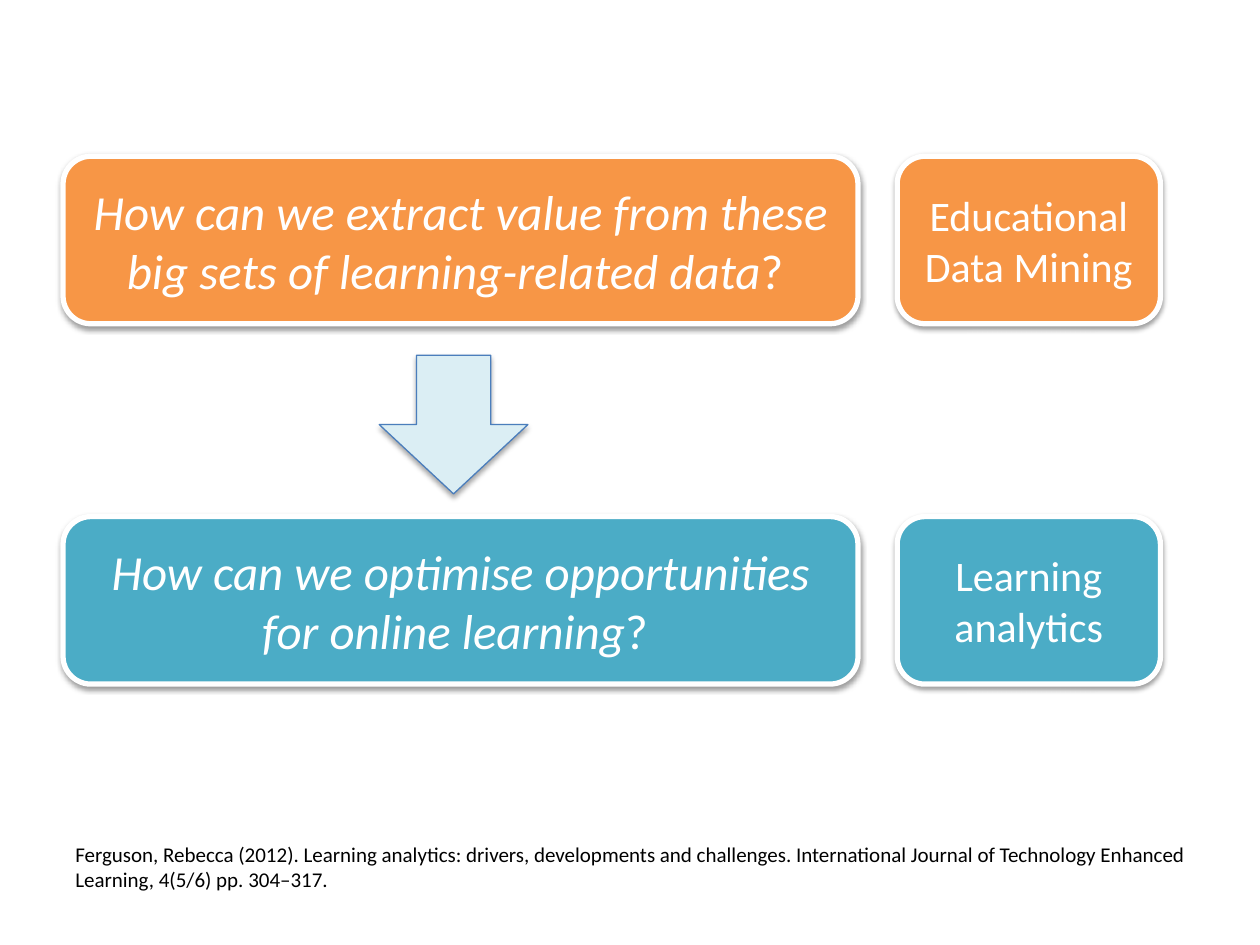
from lxml import etree
from pptx import Presentation
from pptx.dml.color import RGBColor
from pptx.enum.shapes import MSO_SHAPE
from pptx.enum.text import MSO_ANCHOR, MSO_AUTO_SIZE, PP_ALIGN
from pptx.oxml.ns import qn
from pptx.util import Inches, Pt

ROUNDED = MSO_SHAPE.ROUNDED_RECTANGLE
DOWN_ARROW = MSO_SHAPE.DOWN_ARROW
MIDDLE = MSO_ANCHOR.MIDDLE
GROW = MSO_AUTO_SIZE.SHAPE_TO_FIT_TEXT
LEFT, CENTER = PP_ALIGN.LEFT, PP_ALIGN.CENTER

WHITE = RGBColor(0xFF, 0xFF, 0xFF)
BLACK = RGBColor(0x00, 0x00, 0x00)
ORANGE = RGBColor(0xF7, 0x96, 0x46)
TEAL = RGBColor(0x4B, 0xAC, 0xC6)
PALE_BLUE = RGBColor(0xDB, 0xEE, 0xF4)
BLUE = RGBColor(0x4B, 0x7E, 0xBC)


def write_text(frame, spans, size, color, font, align=LEFT):
    """Fill one paragraph with (text, italic) spans."""
    frame.word_wrap = True
    para = frame.paragraphs[0]
    para.alignment = align
    for text, italic in spans:
        span = para.add_run()
        span.text = text
        span.font.name = font
        span.font.size = Pt(size)
        span.font.italic = italic
        span.font.color.rgb = color


class SlideBuilder:
    font = "Calibri"

    def __init__(self, page):
        self.page = page

    def add_shadow(self, shape, opacity, distance):
        """Give the shape a soft shadow that falls straight down."""
        shape.shadow.inherit = False
        effects = shape._element.spPr.find(qn("a:effectLst"))
        shadow = etree.SubElement(
            effects, qn("a:outerShdw"), blurRad=str(Pt(3.1)),
            dist=str(Pt(distance)), dir="5400000", rotWithShape="0")
        color = etree.SubElement(shadow, qn("a:srgbClr"), val=str(BLACK))
        etree.SubElement(color, qn("a:alpha"), val=str(opacity * 1000))

    def shape(self, kind, bounds, fill, line, line_width, opacity, distance):
        shape = self.page.shapes.add_shape(kind, *map(Inches, bounds))
        shape.fill.solid()
        shape.fill.fore_color.rgb = fill
        shape.line.color.rgb = line
        shape.line.width = Pt(line_width)
        self.add_shadow(shape, opacity, distance)
        return shape

    def card(self, bounds, fill, spans, size):
        box = self.shape(ROUNDED, bounds, fill, WHITE, 3, 38, 1.6)
        box.text_frame.vertical_anchor = MIDDLE
        write_text(box.text_frame, spans, size, WHITE, self.font, CENTER)

    def arrow(self, bounds):
        self.shape(DOWN_ARROW, bounds, PALE_BLUE, BLUE, 0.75, 35, 1.8)

    def note(self, bounds, text, size):
        box = self.page.shapes.add_textbox(*map(Inches, bounds))
        write_text(box.text_frame, [(text, False)], size, BLACK, self.font)
        box.text_frame.auto_size = GROW


def main():
    deck = Presentation()
    deck.slide_width, deck.slide_height = Inches(10), Inches(7.5)
    builder = SlideBuilder(deck.slides.add_slide(deck.slide_layouts[6]))

    # Each row pairs a question with its field
    rows = [
        (1.24, ORANGE, "Educational Data Mining",
         "How can we extract value from these big sets of learning-related data"),
        (4.1, TEAL, "Learning analytics",
         "How can we optimise opportunities for online learning"),
    ]
    for top, fill, field, question in rows:
        builder.card((0.5, top, 6.31, 1.33), fill,
                     [(question, True), ("? ", False)], 28)
        builder.card((7.12, top, 2.09, 1.33), fill, [(field, False)], 24)

    # Arrow from the first question to the second
    builder.arrow((3.01, 2.82, 1.18, 1.1))

    # Reference
    builder.note(
        (0.5, 6.63, 9.37, 0.71),
        "Ferguson, Rebecca (2012). Learning analytics: drivers, developments "
        "and challenges. International Journal of Technology Enhanced "
        "Learning, 4(5/6) pp. 304–317.", 12)

    deck.save("out.pptx")


if __name__ == "__main__":
    main()
